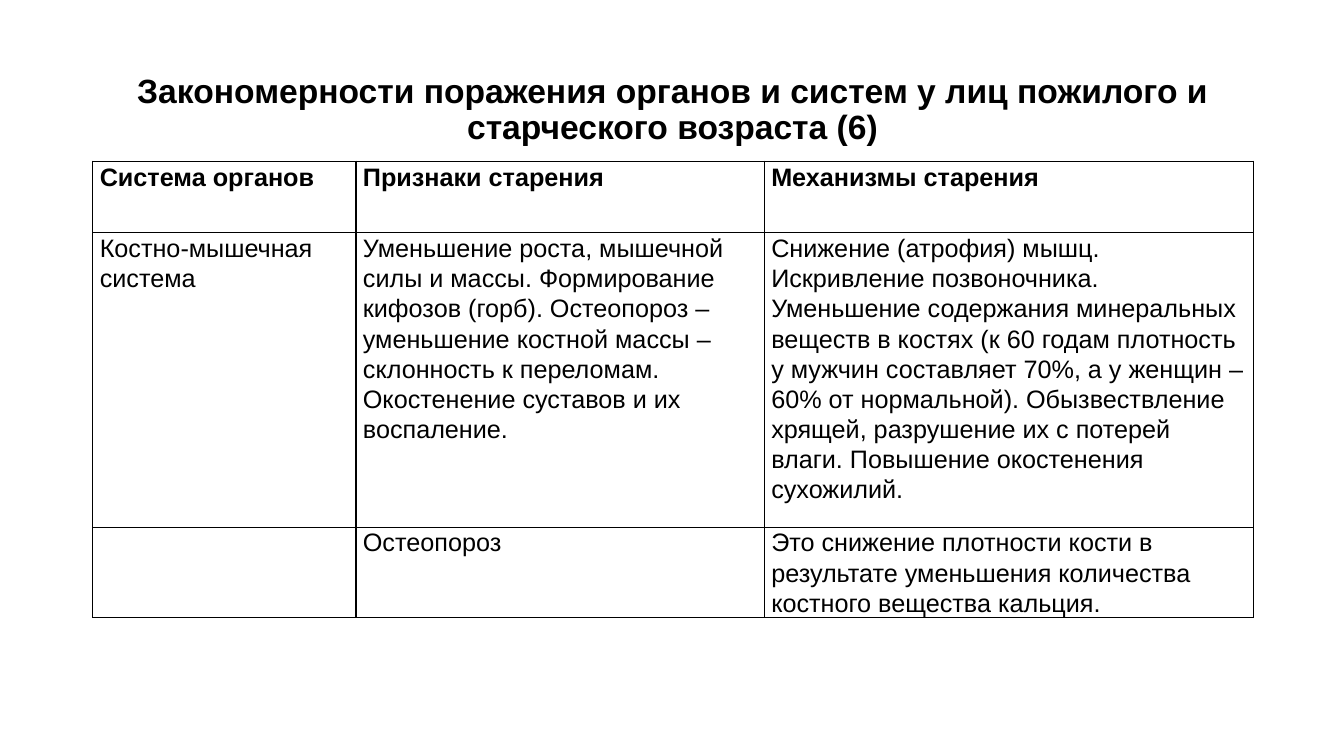
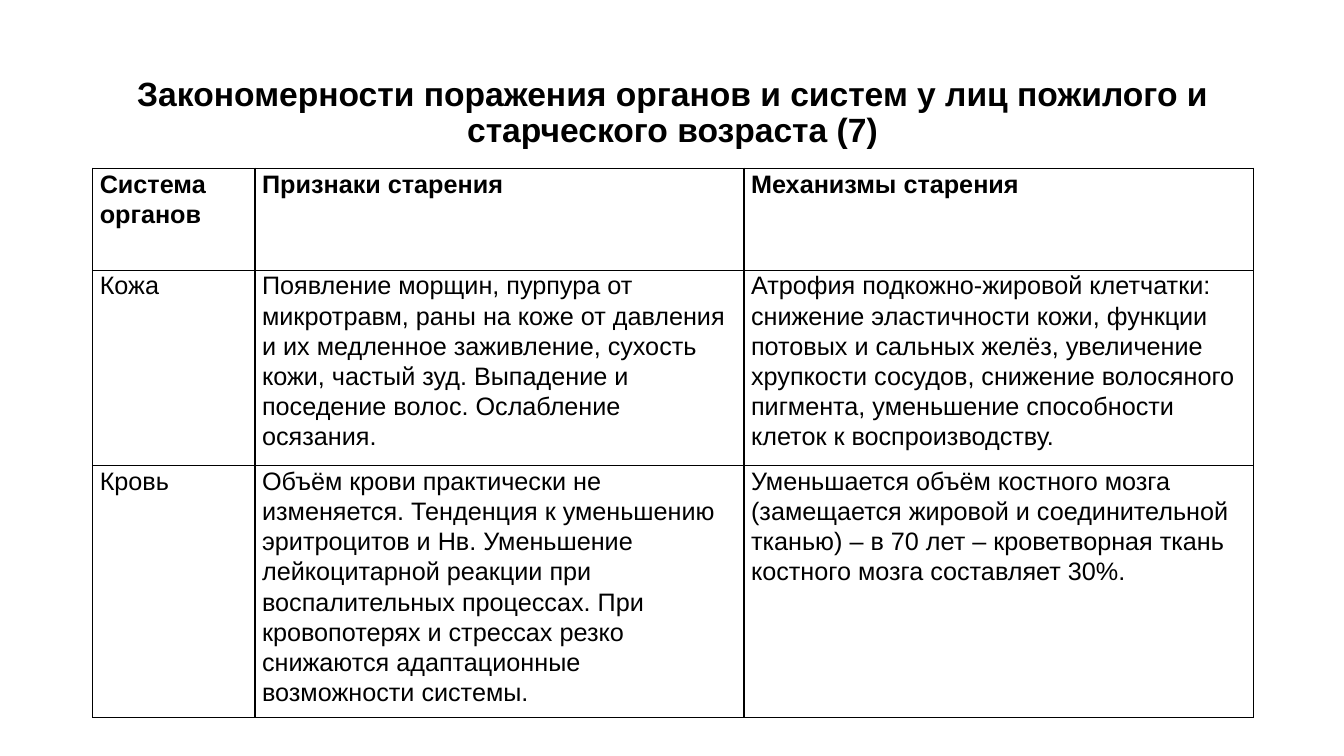
"""Build two slides with tables of ageing signs and mechanisms by organ system."""
from lxml import etree
from pptx import Presentation
from pptx.dml.color import RGBColor
from pptx.enum.text import MSO_ANCHOR, MSO_AUTO_SIZE, PP_ALIGN
from pptx.oxml.ns import qn
from pptx.util import Inches, Pt

CENTER, JUSTIFY, LEFT = PP_ALIGN.CENTER, PP_ALIGN.JUSTIFY, PP_ALIGN.LEFT
MIDDLE, TOP = MSO_ANCHOR.MIDDLE, MSO_ANCHOR.TOP
NO_AUTOFIT = MSO_AUTO_SIZE.NONE

COLORS = {"text": "000000", "border": "000000", "cell": "FFFFFF"}
FONT = "Arial"
TITLE_SIZE, TABLE_SIZE = 24, 18
TITLE_ONLY = 5
MARGIN_LEFT, CONTENT_WIDTH = 0.92, 11.5
CELL_INSET = 0.07
BORDER_WIDTH = 1
BORDER_SIDES = ("a:lnL", "a:lnR", "a:lnT", "a:lnB")

TITLE = "Закономерности поражения органов и систем у лиц пожилого и старческого возраста ({})"
HEADER = ("Система органов", "Признаки старения", "Механизмы старения")

SLIDES = [
    {
        "number": 6,
        "title_top": 0.6,
        "title_height": 1,
        "table_top": 1.6,
        "columns": (2.61, 4.05, 4.85),
        "row_heights": (0.71, 2.92, 0.89),
        "rows": [
            (
                "Костно-мышечная система",
                "Уменьшение роста, мышечной силы и массы. Формирование кифозов (горб). "
                "Остеопороз – уменьшение костной массы – склонность к переломам. "
                "Окостенение суставов и их воспаление.",
                "Снижение (атрофия) мышц. Искривление позвоночника. Уменьшение содержания "
                "минеральных веществ в костях (к 60 годам плотность у мужчин составляет 70%, "
                "а у женщин – 60% от нормальной). Обызвествление хрящей, разрушение их "
                "с потерей влаги. Повышение окостенения сухожилий.",
            ),
            (
                "",
                "Остеопороз",
                "Это снижение плотности кости в результате уменьшения количества "
                "костного вещества кальция.",
            ),
        ],
    },
    {
        "number": 7,
        "title_top": 0.4,
        "title_height": 1.45,
        "table_top": 1.67,
        "columns": (1.61, 4.85, 5.05),
        "row_heights": (1.01, 1.94, 2.5),
        "rows": [
            (
                "Кожа",
                "Появление морщин, пурпура от микротравм, раны на коже от давления и их "
                "медленное заживление, сухость кожи, частый зуд. Выпадение и поседение волос. "
                "Ослабление осязания.",
                "Атрофия подкожно-жировой клетчатки: снижение эластичности кожи, функции "
                "потовых и сальных желёз, увеличение хрупкости сосудов, снижение волосяного "
                "пигмента, уменьшение способности клеток к воспроизводству.",
            ),
            (
                "Кровь",
                "Объём крови практически не изменяется. Тенденция к уменьшению эритроцитов "
                "и Нв. Уменьшение лейкоцитарной реакции при воспалительных процессах. "
                "При кровопотерях и стрессах резко снижаются адаптационные возможности системы.",
                "Уменьшается объём костного мозга (замещается жировой и соединительной тканью) "
                "– в 70 лет – кроветворная ткань костного мозга составляет 30%.",
            ),
        ],
    },
]


def write(frame, text, size, bold, align, line_spacing):
    paragraph = frame.paragraphs[0]
    paragraph.alignment = align
    paragraph.line_spacing = line_spacing
    paragraph.font.size = Pt(size)
    if text:
        run = paragraph.add_run()
        run.text = text
        run.font.name = FONT
        run.font.size = Pt(size)
        run.font.bold = bold
        run.font.color.rgb = RGBColor.from_string(COLORS["text"])


def add_borders(cell):
    properties = cell._tc.get_or_add_tcPr()
    for position, side in enumerate(BORDER_SIDES):
        line = etree.Element(qn(side), w=str(Pt(BORDER_WIDTH)))
        fill = etree.SubElement(line, qn("a:solidFill"))
        etree.SubElement(fill, qn("a:srgbClr"), val=COLORS["border"])
        properties.insert(position, line)


def fill_cell(cell, text, is_header):
    cell.margin_left = cell.margin_right = Inches(CELL_INSET)
    cell.margin_top = cell.margin_bottom = 0
    cell.vertical_anchor = TOP
    cell.fill.solid()
    cell.fill.fore_color.rgb = RGBColor.from_string(COLORS["cell"])
    add_borders(cell)
    write(cell.text_frame, text, TABLE_SIZE, is_header, JUSTIFY if is_header else LEFT, 1.07)


def add_title(slide, content):
    title = slide.shapes.title
    title.left, title.top = Inches(MARGIN_LEFT), Inches(content["title_top"])
    title.width, title.height = Inches(CONTENT_WIDTH), Inches(content["title_height"])
    frame = title.text_frame
    frame.auto_size = NO_AUTOFIT
    frame.word_wrap = True
    frame.vertical_anchor = MIDDLE
    write(frame, TITLE.format(content["number"]), TITLE_SIZE, True, CENTER, 0.9)


def add_organ_table(slide, content):
    rows = [HEADER, *content["rows"]]
    heights = content["row_heights"]
    table = slide.shapes.add_table(
        len(rows), len(HEADER), Inches(MARGIN_LEFT), Inches(content["table_top"]),
        Inches(CONTENT_WIDTH), Inches(sum(heights)),
    ).table
    table.horz_banding = False
    for column, width in zip(table.columns, content["columns"]):
        column.width = Inches(width)
    for row_index, (texts, height) in enumerate(zip(rows, heights)):
        table.rows[row_index].height = Inches(height)
        for column_index, text in enumerate(texts):
            fill_cell(table.cell(row_index, column_index), text, row_index == 0)


def main():
    presentation = Presentation()
    presentation.slide_width = Inches(13.33)
    presentation.slide_height = Inches(7.5)
    for content in SLIDES:
        slide = presentation.slides.add_slide(presentation.slide_layouts[TITLE_ONLY])
        add_title(slide, content)
        add_organ_table(slide, content)
    presentation.save("out.pptx")


if __name__ == "__main__":
    main()
